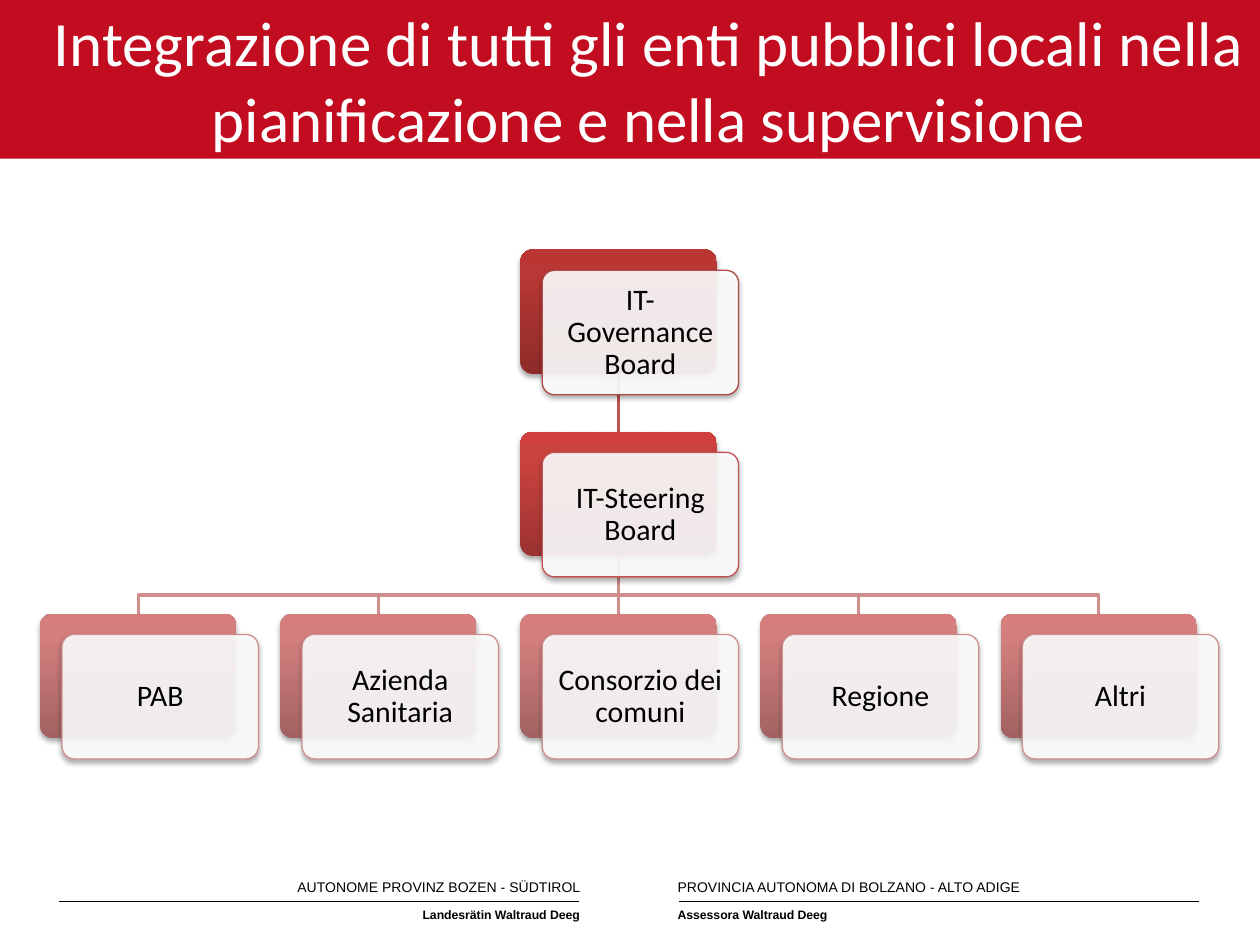
import copy
from dataclasses import dataclass

import pptx
import pptx.util
import pptx.dml.color
import pptx.enum.shapes
import pptx.enum.text
import pptx.oxml
import pptx.oxml.ns

Cm, Pt = pptx.util.Cm, pptx.util.Pt
Align = pptx.enum.text.PP_ALIGN
Anchor = pptx.enum.text.MSO_ANCHOR
Form = pptx.enum.shapes.MSO_SHAPE
Link = pptx.enum.shapes.MSO_CONNECTOR

WIDE, HIGH = 3.96, 2.51
LEFT, TOP = 0.81, 5.03
STEP, DROP = 4.84, 3.67
SIDE, DOWN = 0.44, 0.42
BEND = 0.79
ROSE, BRICK = "CF8D8C", "C15452"
SHADE = (
    '<a:outerShdw xmlns:a="http://schemas.openxmlformats.org/drawingml/2006/main" '
    'blurRad="39370" dist="22860" dir="5400000" rotWithShape="0">'
    '<a:srgbClr val="000000"><a:alpha val="35000"/></a:srgbClr></a:outerShdw>'
)


@dataclass
class Node:
    text: str
    col: int
    row: int
    edge: str
    tones: tuple

    @property
    def left(self) -> float:
        return LEFT + self.col * STEP

    @property
    def top(self) -> float:
        return TOP + self.row * DROP

    @property
    def mid(self) -> float:
        return self.left + WIDE / 2


@dataclass
class Label:
    text: str
    left: float
    top: float
    wide: float
    size: float
    bold: bool
    align: int
    wrap: bool
    lead: object


def hue(code: str):
    return pptx.dml.color.RGBColor.from_string(code)


def put(item, values: dict) -> None:
    for name, value in values.items():
        setattr(item, name, value)


def write(shape, text: str, size: float, code: str, face: str, frame: dict, para: dict) -> None:
    put(shape.text_frame, frame)
    line = shape.text_frame.paragraphs[0]
    put(line, para)
    run = line.add_run()
    put(run, {"text": text})
    put(run.font, {"size": Pt(size), "name": face})
    run.font.color.rgb = hue(code)


def margins(left: float, top: float, right: float, base: float) -> dict:
    return {"margin_left": Cm(left), "margin_top": Cm(top),
            "margin_right": Cm(right), "margin_bottom": Cm(base)}


def ink(shape, code: str, width: float) -> None:
    shape.line.color.rgb = hue(code)
    shape.line.width = Pt(width)


def rule(slide, start: tuple, end: tuple, code: str, width: float) -> None:
    line = slide.shapes.add_connector(Link.STRAIGHT, *map(Cm, start + end))
    ink(line, code, width)
    line._element.spPr.append(pptx.oxml.parse_xml(
        '<a:effectLst xmlns:a="http://schemas.openxmlformats.org/drawingml/2006/main"/>'))


def join(slide, head: Node, tail: Node) -> None:
    base = head.top + HIGH
    if head.col == tail.col:
        rule(slide, (head.mid, base), (tail.mid, tail.top), tail.edge, 2)
        return
    path = slide.shapes.build_freeform(Cm(head.mid), Cm(base))
    points = [(head.mid, base + BEND), (tail.mid, base + BEND), (tail.mid, tail.top)]
    path.add_line_segments([(Cm(x), Cm(y)) for x, y in points], close=False)
    elbow = path.convert_to_shape()
    elbow.shadow.inherit = False
    elbow.fill.background()
    ink(elbow, tail.edge, 2)


def card(slide, left: float, top: float):
    shape = slide.shapes.add_shape(
        Form.ROUNDED_RECTANGLE, Cm(left), Cm(top), Cm(WIDE), Cm(HIGH))
    shape.adjustments[0] = 0.1
    shape.shadow.inherit = False
    shape._element.spPr.find(pptx.oxml.ns.qn("a:effectLst")).append(
        pptx.oxml.parse_xml(SHADE))
    return shape


def draw(slide, node: Node) -> None:
    back = card(slide, node.left, node.top)
    back.line.fill.background()
    back.fill.gradient()
    back.fill.gradient_angle = 90
    stops = back._element.spPr.find(".//" + pptx.oxml.ns.qn("a:gsLst"))
    stops.append(copy.deepcopy(stops[0]))
    for stop, place, tone in zip(back.fill.gradient_stops, (0, 0.8, 1), node.tones):
        stop.position = place
        stop.color.rgb = hue(tone)

    front = card(slide, node.left + SIDE, node.top + DOWN)
    front.fill.solid()
    front.fill.fore_color.rgb = hue("FFFFFF")
    tint = front._element.spPr.find(".//" + pptx.oxml.ns.qn("a:srgbClr"))
    pptx.oxml.xmlchemy.OxmlElement("a:alpha")
    alpha = pptx.oxml.xmlchemy.OxmlElement("a:alpha")
    alpha.set("val", "90000")
    tint.append(alpha)
    ink(front, node.edge, 0.75)
    frame = {"word_wrap": True, "vertical_anchor": Anchor.MIDDLE,
             **margins(0.25, 0.25, 0.25, 0.25)}
    write(front, node.text, 17, "000000", "Calibri", frame,
          {"alignment": Align.CENTER, "line_spacing": 0.9})


def note(slide, label: Label) -> None:
    box = slide.shapes.add_textbox(
        Cm(label.left), Cm(label.top), Cm(label.wide), Cm(0.6))
    write(box, label.text, label.size, "000000", "Arial", {"word_wrap": label.wrap},
          {"alignment": label.align, "line_spacing": label.lead})
    box.text_frame.paragraphs[0].runs[0].font.bold = label.bold


def main() -> None:
    deck = pptx.Presentation()
    put(deck, {"slide_width": Cm(25.4), "slide_height": Cm(19.05)})
    slide = deck.slides.add_slide(deck.slide_layouts[5])

    title = slide.shapes.title
    put(title, {"left": 0, "top": 0, "width": Cm(25.4), "height": Cm(3.2)})
    title.fill.solid()
    title.fill.fore_color.rgb = hue("C20D20")
    frame = {"word_wrap": True, "vertical_anchor": Anchor.MIDDLE,
             "auto_size": pptx.enum.text.MSO_AUTO_SIZE.NONE,
             **margins(1, 0.13, 0.25, 0.13)}
    write(title, "Integrazione di tutti gli enti pubblici locali nella "
          "pianificazione e nella supervisione", 36, "FFFFFF", "Calibri", frame,
          {"alignment": Align.CENTER})

    for left in (1.19, 13.69):
        rule(slide, (left, 18.16), (left + 10.49, 18.16), "000000", 0.4)
    labels = [
        Label("AUTONOME PROVINZ BOZEN - SÜDTIROL", 5.74, 17.58, 6.22, 8, False,
              Align.RIGHT, True, None),
        Label("PROVINCIA AUTONOMA DI BOLZANO - ALTO ADIGE", 13.41, 17.58, 7.52, 8, False,
              Align.LEFT, False, None),
        Label("Landesrätin Waltraud Deeg", 8.2, 18.01, 3.74, 7, True,
              Align.RIGHT, False, Pt(13)),
        Label("Assessora Waltraud Deeg", 13.41, 18.01, 3.58, 7, True,
              Align.LEFT, False, Pt(13)),
    ]
    for label in labels:
        note(slide, label)

    board = Node("IT-Governance Board", 2, 0, "AE4946", ("8E2B28", "B83835", "BB3632"))
    steer = Node("IT-Steering Board", 2, 1, BRICK, ("9C3331", "CB433F", "CF403D"))
    names = ["PAB", "Azienda Sanitaria", "Consorzio dei comuni", "Regione", "Altri"]
    teams = [Node(name, col, 2, ROSE, ("A26261", "D27F7E", "D57E7D"))
             for col, name in enumerate(names)]
    for team in reversed(teams):
        join(slide, steer, team)
    join(slide, board, steer)
    for node in [board, steer, *teams]:
        draw(slide, node)

    deck.save("out.pptx")


if __name__ == "__main__":
    main()
